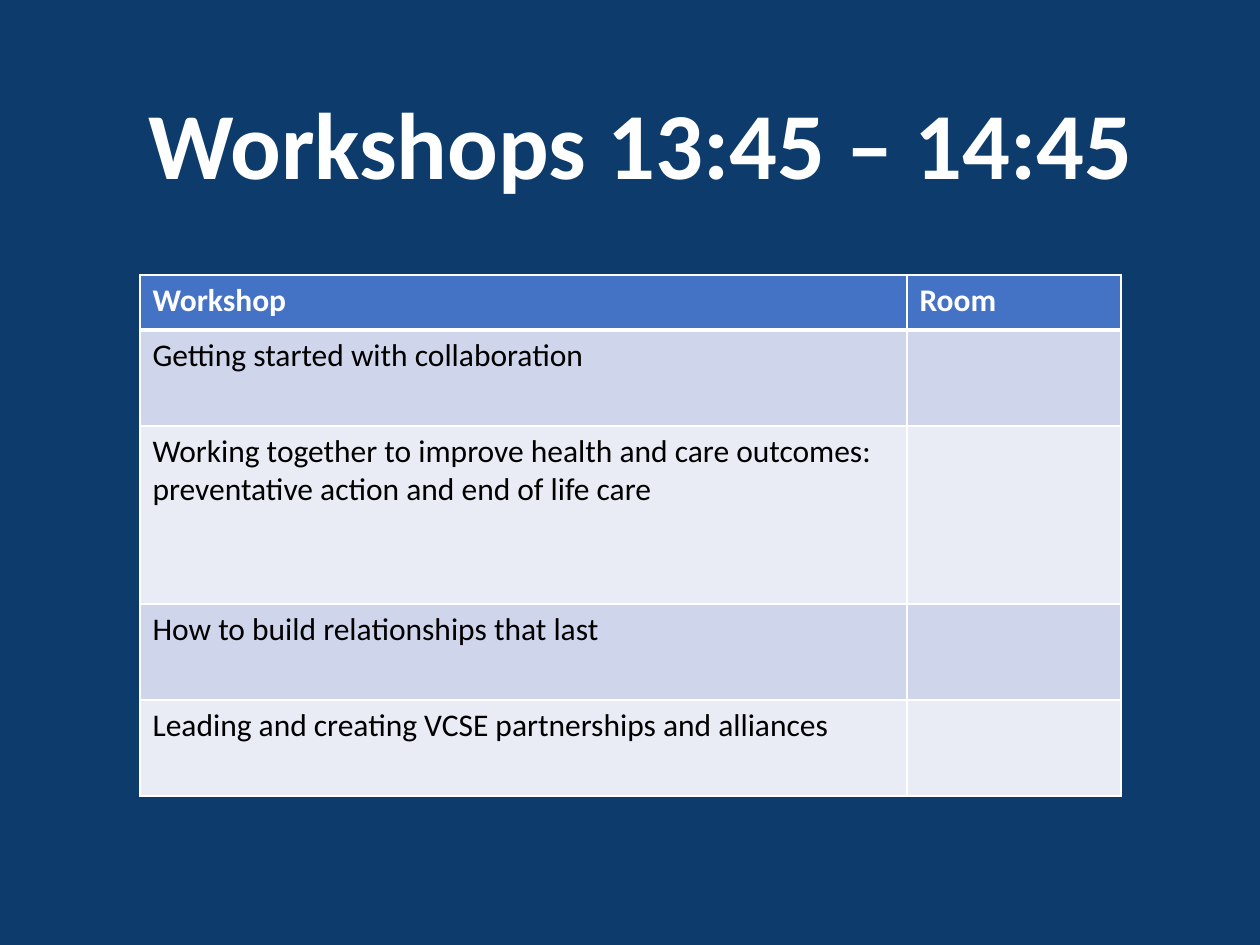
from dataclasses import dataclass

from pptx import Presentation
from pptx.dml.color import RGBColor
from pptx.enum.text import MSO_ANCHOR, PP_ALIGN
from pptx.oxml.ns import qn
from pptx.util import Emu, Pt
from lxml.etree import SubElement

EMU_PER_PX = 914400 / 126
NAVY = RGBColor(0x0D, 0x3C, 0x6C)
WHITE = RGBColor(0xFF, 0xFF, 0xFF)
BLACK = RGBColor(0x00, 0x00, 0x00)
HEADER_BLUE = RGBColor(0x44, 0x72, 0xC4)
BANDS = (RGBColor(0xCF, 0xD5, 0xEA), RGBColor(0xE9, 0xEB, 0xF5))


@dataclass
class Session:
    workshop: str
    room: str
    height: int


HEADER = Session("Workshop", "Room", 55)
SESSIONS = [
    Session("Getting started with collaboration", "", 96),
    Session("Working together to improve health and care outcomes: "
            "preventative action and end of life care", "", 178),
    Session("How to build relationships that last", "", 96),
    Session("Leading and creating VCSE partnerships and alliances", "", 96),
]
COLUMN_WIDTHS = (767, 214)


def px(n: int) -> Emu:
    return Emu(round(n * EMU_PER_PX))


def write(tf, text: str, *, size: int = 18, color: RGBColor = BLACK,
          bold: bool = False) -> None:
    p = tf.paragraphs[0]
    p.alignment = PP_ALIGN.LEFT
    p.line_spacing = 1.0
    p.font.size = Pt(size)
    if text:
        r = p.add_run()
        r.text = text
        r.font.name = "Calibri"
        r.font.size = Pt(size)
        r.font.bold = bold
        r.font.color.rgb = color


def set_borders(cell, **widths: int) -> None:
    tc_pr = cell._tc.get_or_add_tcPr()
    for side in "LRTB":
        ln = SubElement(tc_pr, qn(f"a:ln{side}"), w=str(Pt(widths.get(side, 1))))
        fill = SubElement(ln, qn("a:solidFill"))
        SubElement(fill, qn("a:srgbClr"), val=str(WHITE))


def add_title(slide, text: str) -> None:
    s = slide.shapes.title
    s.left, s.top, s.width, s.height = px(136), px(79), px(1087), px(127)
    tf = s.text_frame
    tf.word_wrap = True
    tf.vertical_anchor = MSO_ANCHOR.TOP
    write(tf, text, size=54, color=WHITE, bold=True)


def add_schedule(slide, rows: list[Session]) -> None:
    frame = slide.shapes.add_table(
        len(rows), len(COLUMN_WIDTHS), px(140), px(275),
        px(sum(COLUMN_WIDTHS)), px(sum(row.height for row in rows)))
    table = frame.table
    for column, width in zip(table.columns, COLUMN_WIDTHS):
        column.width = px(width)
    for i, row in enumerate(rows):
        table.rows[i].height = px(row.height)
        is_header = i == 0
        for j, text in enumerate((row.workshop, row.room)):
            cell = table.cell(i, j)
            set_borders(cell, T=3 if i == 1 else 1, B=3 if is_header else 1)
            cell.fill.solid()
            cell.fill.fore_color.rgb = HEADER_BLUE if is_header else BANDS[(i - 1) % 2]
            write(cell.text_frame, text, color=WHITE if is_header else BLACK,
                  bold=is_header)


def main() -> None:
    prs = Presentation()
    prs.slide_width, prs.slide_height = px(1260), px(945)
    slide = prs.slides.add_slide(prs.slide_layouts[5])
    slide.background.fill.solid()
    slide.background.fill.fore_color.rgb = NAVY
    add_title(slide, "Workshops 13:45 – 14:45")
    add_schedule(slide, [HEADER, *SESSIONS])
    prs.save("out.pptx")


if __name__ == "__main__":
    main()
